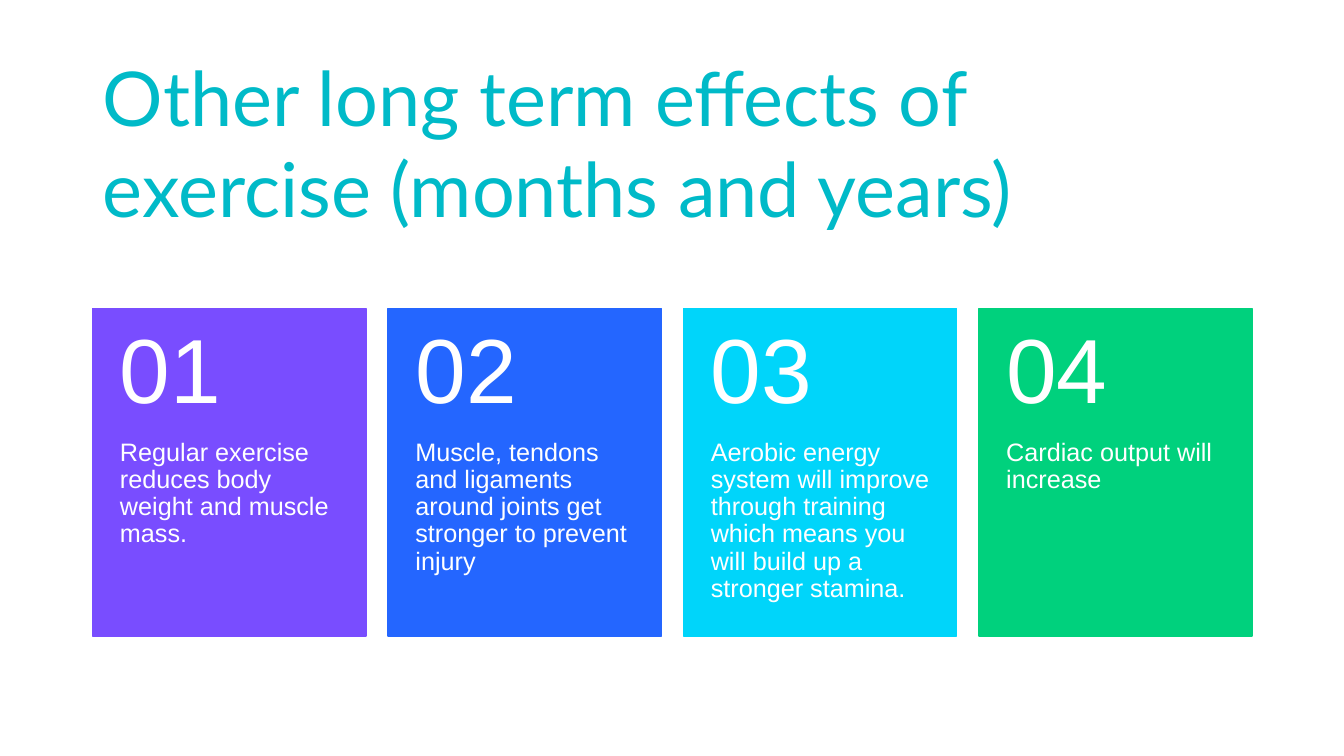
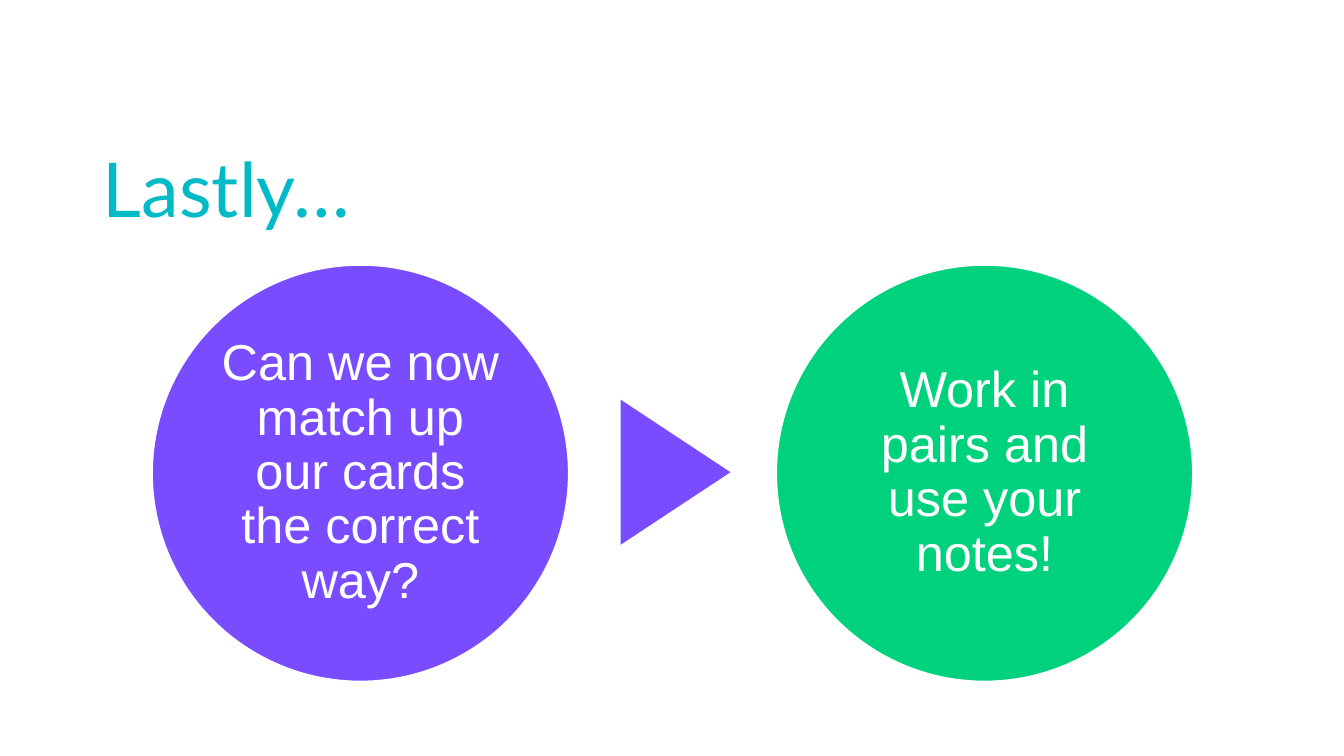
import pptx
import pptx.util
import pptx.dml.color
import pptx.enum.shapes
import pptx.enum.text

RGB = pptx.dml.color.RGBColor
SHAPE = pptx.enum.shapes.MSO_SHAPE
ANCHOR = pptx.enum.text.MSO_ANCHOR
ALIGN = pptx.enum.text.PP_ALIGN

TEAL = RGB(0x00, 0xBA, 0xC8)
PURPLE = RGB(0x79, 0x4D, 0xFF)
BLUE = RGB(0x24, 0x66, 0xFF)
CYAN = RGB(0x00, 0xD5, 0xFA)
GREEN = RGB(0x00, 0xD1, 0x7D)
WHITE = RGB(0xFF, 0xFF, 0xFF)

SCALE = 9144
LEFT, WIDE = 92, 1150
CARDS = [
    (PURPLE, "Regular exercise reduces body weight and muscle mass."),
    (BLUE, "Muscle, tendons and ligaments around joints get stronger to prevent injury"),
    (CYAN, "Aerobic energy system will improve through training which means you "
           "will build up a stronger stamina."),
    (GREEN, "Cardiac output will increase"),
]


def px(num):
    return pptx.util.Emu(num * SCALE)


def write(shape, text, size, font="Arial", color=WHITE, align=ALIGN.LEFT,
          anchor=ANCHOR.TOP, inset=(10, 5, 10, 5), spacing=0.9):
    frame = shape.text_frame
    frame.text = text
    frame.word_wrap = True
    frame.auto_size = pptx.enum.text.MSO_AUTO_SIZE.NONE
    frame.vertical_anchor = anchor
    (frame.margin_left, frame.margin_top,
     frame.margin_right, frame.margin_bottom) = map(px, inset)
    for line in frame.paragraphs:
        line.alignment = align
        line.line_spacing = spacing
        for run in line.runs:
            run.font.size = pptx.util.Pt(size)
            run.font.name = font
            run.font.color.rgb = color


def add_slide(deck, title):
    slide = deck.slides.add_slide(deck.slide_layouts[5])
    head = slide.shapes.title
    head.left, head.top, head.width, head.height = map(px, (LEFT, 40, WIDE, 196))
    write(head, title, 54, "Lato", TEAL, anchor=ANCHOR.BOTTOM, spacing=1.0)
    return slide


def add_shape(slide, kind, box, fill, line=None):
    shape = slide.shapes.add_shape(kind, *map(px, box))
    shape.shadow.inherit = False
    shape.fill.solid()
    shape.fill.fore_color.rgb = fill
    if line is None:
        shape.line.fill.background()
    else:
        shape.line.color.rgb = line
        shape.line.width = pptx.util.Pt(1)
    return shape


def add_text(slide, box, text, size, **style):
    write(slide.shapes.add_textbox(*map(px, box)), text, size, **style)


def add_card(slide, left, label, text, fill):
    top, width, height, head = 306, 271, 325, 130
    add_shape(slide, SHAPE.RECTANGLE, (left, top, width, height), fill, fill)
    add_text(slide, (left, top + head, width, height - head), text, 18,
             inset=(27, 0, 27, 36))
    add_text(slide, (left, top, width, head), label, 65,
             anchor=ANCHOR.MIDDLE, inset=(27, 18, 27, 18))


def add_disc(slide, left, text, fill):
    disc = add_shape(slide, SHAPE.OVAL, (left, 263, 413, 413), fill, WHITE)
    write(disc, text, 36, align=ALIGN.CENTER, anchor=ANCHOR.MIDDLE,
          inset=(5, 5, 5, 5))


def main():
    deck = pptx.Presentation()
    deck.slide_width, deck.slide_height = px(1333), px(750)

    slide = add_slide(deck, "Other long term effects of exercise (months and years)")
    for index, (fill, text) in enumerate(CARDS):
        add_card(slide, LEFT + 293 * index, f"{index + 1:02}", text, fill)

    slide = add_slide(deck, "Lastly…")
    add_disc(slide, 151, "Can we now match up our cards the correct way?", PURPLE)
    arrow = add_shape(slide, SHAPE.ISOSCELES_TRIANGLE, (598, 414, 144, 109), PURPLE)
    arrow.rotation = 90
    add_disc(slide, 770, "Work in pairs and use your notes!", GREEN)

    deck.save("out.pptx")


if __name__ == "__main__":
    main()
